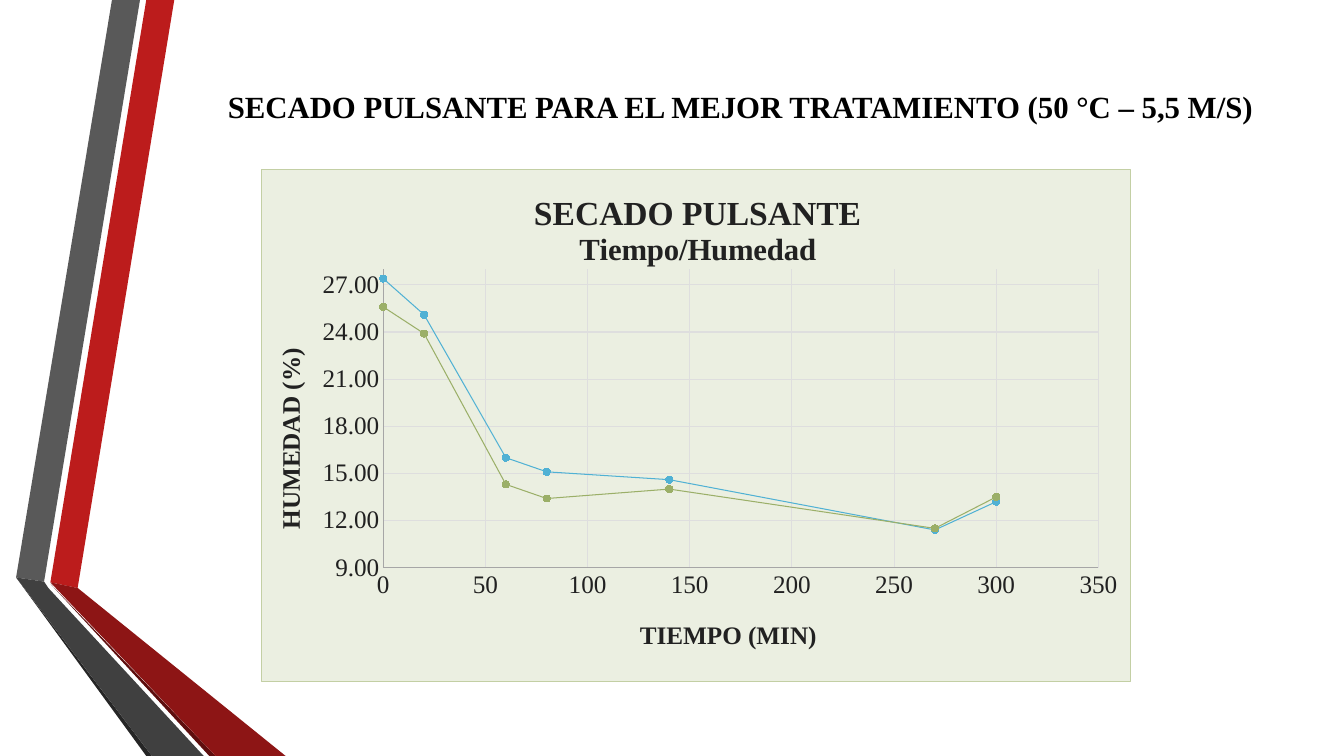
from lxml import etree
from pptx import Presentation
from pptx.chart.data import XyChartData
from pptx.dml.color import RGBColor
from pptx.enum import chart as charts, text
from pptx.oxml import parse_xml
from pptx.oxml.ns import nsdecls, qn
from pptx.util import Pt

FONT = "Times New Roman"
BLACK = RGBColor(0x00, 0x00, 0x00)
INK = RGBColor(0x21, 0x21, 0x21)
RED = RGBColor(0xBC, 0x1C, 0x1C)
DARK_RED = RGBColor(0x8D, 0x15, 0x15)
DEEP_RED = RGBColor(0x5E, 0x0E, 0x0E)
GRAY = RGBColor(0x59, 0x59, 0x59)
DARK_GRAY = RGBColor(0x40, 0x40, 0x40)
DEEP_GRAY = RGBColor(0x26, 0x26, 0x26)
AXIS = RGBColor(0xA6, 0xA6, 0xA6)
GRID = RGBColor(0xDE, 0xDE, 0xDE)
GREEN = RGBColor(0x9B, 0xAF, 0x68)
GREEN_DOT = RGBColor(0x9D, 0xB3, 0x64)
BLUE = RGBColor(0x50, 0xB1, 0xD4)
BLUE_DOT = RGBColor(0x49, 0xB4, 0xDB)

MINUTES = [0, 20, 60, 80, 140, 270, 300]
HUMIDITY = [
    ("Series 1", [25.6, 23.9, 14.3, 13.4, 14, 11.5, 13.5], GREEN, GREEN_DOT),
    ("Series 2", [27.4, 25.1, 16, 15.1, 14.6, 11.4, 13.2], BLUE, BLUE_DOT),
]
RIBBON = [
    (RED, [(24.5, 416), (44, 420), (113, 0), (93, 0)]),
    (GRAY, [(88.5, 0), (68.5, 0), (0, 412.5), (20, 415.5)]),
    (DEEP_GRAY, [(0, 412.5), (93, 540), (97, 540)]),
    (DEEP_RED, [(24.5, 417), (138, 540), (142.5, 540)]),
    (DARK_RED, [(24.5, 416), (142.5, 540), (192.5, 540), (44, 420)]),
    (DARK_GRAY, [(134, 540), (23, 420), (20, 415.5), (0, 412.5), (97, 540)]),
]


def add_ribbon(slide, left, top):
    for color, corners in RIBBON:
        points = [(Pt(left + x), Pt(top + y)) for x, y in corners]
        builder = slide.shapes.build_freeform(*points[0])
        builder.add_line_segments(points[1:], close=True)
        band = builder.convert_to_shape()
        band.shadow.inherit = False
        band.fill.solid()
        band.fill.fore_color.rgb = color
        band.line.fill.background()


def style_font(font, size, color, bold=False):
    font.name = FONT
    font.size = Pt(size)
    font.bold = bold
    font.color.rgb = color


def add_heading(slide, left, top, width, height):
    heading = slide.shapes.title
    heading.left, heading.top = Pt(left), Pt(top)
    heading.width, heading.height = Pt(width), Pt(height)
    frame = heading.text_frame
    frame.text = "SECADO PULSANTE PARA EL MEJOR TRATAMIENTO (50 °C – 5,5 M/S)"
    frame.word_wrap = True
    frame.auto_size = text.MSO_AUTO_SIZE.NONE
    frame.vertical_anchor = text.MSO_ANCHOR.MIDDLE
    line = frame.paragraphs[0]
    line.alignment = text.PP_ALIGN.LEFT
    style_font(line.font, 22, BLACK, True)


def set_layout(parent, index, **places):
    for old in parent.findall(qn("c:layout")):
        parent.remove(old)
    layout = etree.Element(qn("c:layout"))
    manual = etree.SubElement(layout, qn("c:manualLayout"))
    for tag, value in places.items():
        etree.SubElement(manual, qn("c:" + tag)).set("val", str(value))
    parent.insert(index, layout)


def write_title(owner, lines, x, y):
    owner.has_title = True
    title = owner.chart_title if hasattr(owner, "chart_title") else owner.axis_title
    frame = title.text_frame
    frame.text = "\n".join(words for words, size in lines)
    for paragraph, (words, size) in zip(frame.paragraphs, lines):
        style_font(paragraph.font, size, INK, True)
    set_layout(title._element, 1, xMode="edge", yMode="edge", x=x, y=y)
    return frame


def style_axis(axis, low, high, step, number_format):
    axis.minimum_scale, axis.maximum_scale = low, high
    axis.major_unit = step
    axis.major_tick_mark = axis.minor_tick_mark = charts.XL_TICK_MARK.NONE
    axis.has_major_gridlines = True
    axis.tick_labels.number_format = number_format
    axis.tick_labels.number_format_is_linked = False
    style_font(axis.tick_labels.font, 18, INK)
    for line, color in ((axis.format.line, AXIS),
                        (axis.major_gridlines.format.line, GRID)):
        line.color.rgb = color
        line.width = Pt(0.75)


def add_drying_chart(slide, left, top, width, height):
    data = XyChartData()
    for name, values, _, _ in HUMIDITY:
        series = data.add_series(name)
        for minute, value in zip(MINUTES, values):
            series.add_data_point(minute, value)
    chart = slide.shapes.add_chart(
        charts.XL_CHART_TYPE.XY_SCATTER_LINES,
        Pt(left), Pt(top), Pt(width), Pt(height), data).chart
    style_font(chart.font, 18, BLACK)
    chart.has_legend = False
    write_title(chart, [("SECADO PULSANTE", 24), ("Tiempo/Humedad", 22)], 0.31, 0.04)
    time, humidity = chart.category_axis, chart.value_axis
    style_axis(time, 0, 350, 50, "General")
    style_axis(humidity, 9, 28, 3, "0.00")
    write_title(time, [("TIEMPO (MIN)", 18)], 0.43, 0.87)
    label = write_title(humidity, [("HUMEDAD (%)", 18)], 0.01, 0.34)
    label._txBody.bodyPr.set("rot", "-5400000")
    label._txBody.bodyPr.set("vert", "horz")

    plot = chart.plots[0]
    plot.vary_by_categories = False
    for series, (_, _, color, dot) in zip(plot.series, HUMIDITY):
        series.smooth = False
        series.format.line.color.rgb = color
        series.format.line.width = Pt(0.75)
        marker = series.marker
        marker.style = charts.XL_MARKER_STYLE.CIRCLE
        marker.size = 5
        marker.format.fill.solid()
        marker.format.fill.fore_color.rgb = dot
        marker.format.line.color.rgb = dot

    space = chart._chartSpace
    set_layout(space.chart.plotArea, 0, layoutTarget="inner", xMode="edge",
               yMode="edge", x=0.14, y=0.194, w=0.823, h=0.583)
    space.chart.addnext(parse_xml(
        f'<c:spPr {nsdecls("c", "a")}>'
        '<a:solidFill><a:srgbClr val="EBEFE1"/></a:solidFill>'
        '<a:ln w="9525"><a:solidFill><a:srgbClr val="C3CFA4"/></a:solidFill></a:ln>'
        '</c:spPr>'))


def main():
    deck = Presentation()
    deck.slide_width, deck.slide_height = Pt(960), Pt(540)
    slide = deck.slides.add_slide(deck.slide_layouts[5])
    add_ribbon(slide, 11.5, 0)
    add_drying_chart(slide, 186.5, 121, 621.5, 366.5)
    add_heading(slide, 155.5, 58.5, 748, 34)
    deck.save("out.pptx")


if __name__ == "__main__":
    main()
